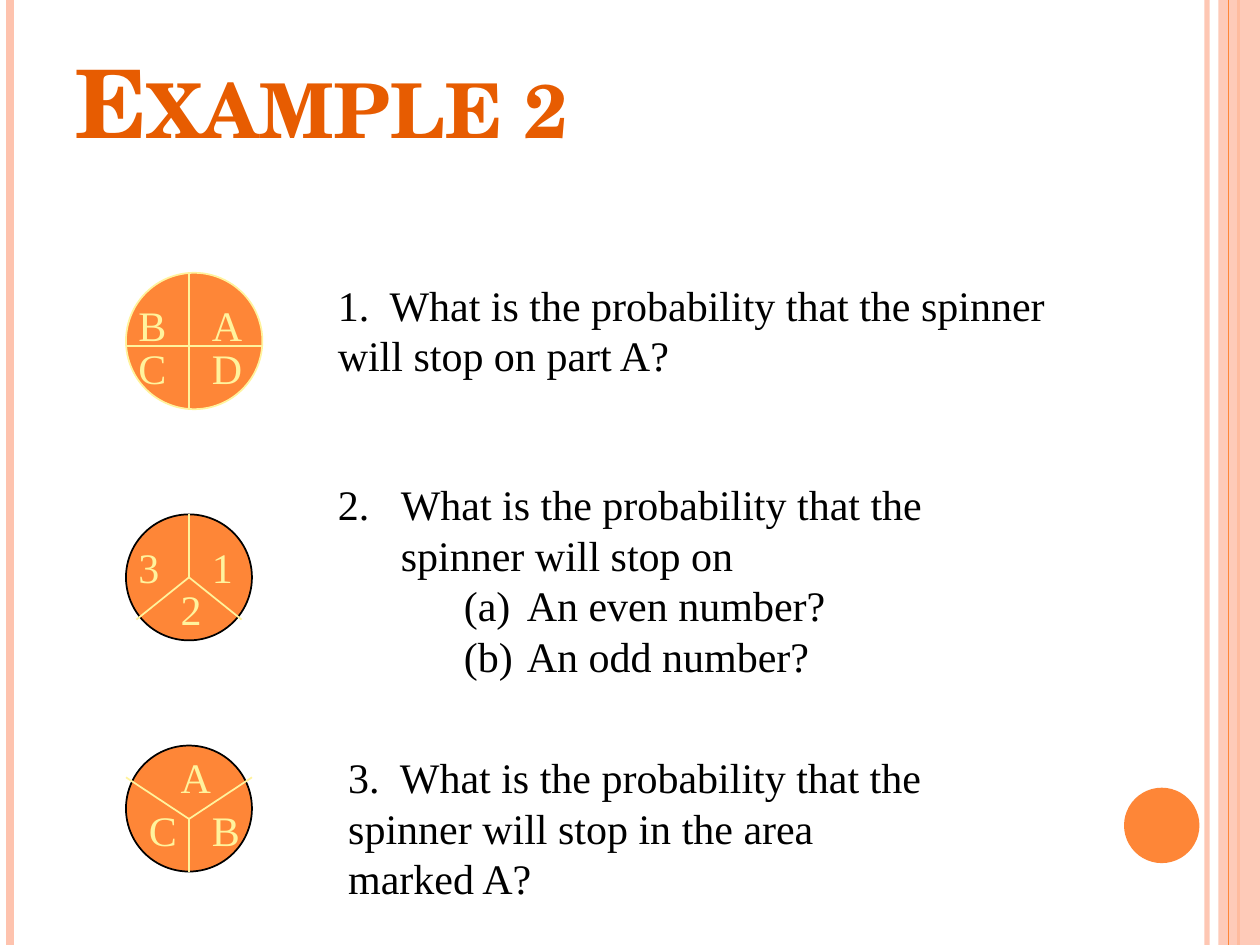
from lxml import etree
from pptx import Presentation
from pptx.dml.color import RGBColor
from pptx.enum.shapes import MSO_CONNECTOR, MSO_SHAPE
from pptx.enum.text import MSO_ANCHOR, PP_ALIGN
from pptx.oxml.ns import qn
from pptx.util import Cm, Pt

LINE = MSO_CONNECTOR.STRAIGHT
OVAL, RECT = MSO_SHAPE.OVAL, MSO_SHAPE.RECTANGLE
TOP, LEFT = MSO_ANCHOR.TOP, PP_ALIGN.LEFT
C = {"orange": "FE8637", "peach": "FEC3AE", "cream": "FFF39D",
     "title": "E75C01", "black": "000000"}
FONT = "Times New Roman"


def add_line(shapes, x1, y1, x2, y2, color, width):
    ln = shapes.add_connector(LINE, Cm(x1), Cm(y1), Cm(x2), Cm(y2))
    ln.line.color.rgb = RGBColor.from_string(C[color])
    ln.line.width = Pt(width)
    etree.SubElement(ln._element.spPr, qn("a:effectLst"))
    return ln


def add_text(shapes, x, y, w, h, lines, color):
    tf = shapes.add_textbox(Cm(x), Cm(y), Cm(w), Cm(h)).text_frame
    tf.word_wrap = True
    for i, text in enumerate(lines):
        p = tf.paragraphs[0] if i == 0 else tf.add_paragraph()
        r = p.add_run()
        r.text = text
        r.font.name = FONT
        r.font.size = Pt(24)
        r.font.color.rgb = RGBColor.from_string(C[color])
    return tf


prs = Presentation()
prs.slide_width, prs.slide_height = Cm(25.4), Cm(19.05)
s = prs.slides.add_slide(prs.slide_layouts[5])

edge = add_line(s.shapes, 24.33, 0, 24.33, 19.05, "peach", 3)
add_line(s.shapes, 0.21, 0, 0.21, 19.05, "peach", 4.5)
add_line(s.shapes, 24.97, 0, 24.97, 19.05, "orange", 1.5)
band = s.shapes.add_shape(RECT, Cm(24.56), 0, Cm(0.84), Cm(19.05))
add_line(s.shapes, 24.77, 0, 24.77, 19.05, "orange", 0.75)
dot = s.shapes.add_shape(OVAL, Cm(22.66), Cm(15.88), Cm(1.52), Cm(1.52))
for sp, color in [(band, "peach"), (dot, "orange")]:
    sp.shadow.inherit = False
    sp.fill.solid()
    sp.fill.fore_color.rgb = RGBColor.from_string(C[color])
    sp.line.fill.background()
for sp, alpha in [(edge, 93000), (band, 87000)]:
    clr = next(sp._element.spPr.iter(qn("a:srgbClr")))
    etree.SubElement(clr, qn("a:alpha")).set("val", str(alpha))

add_text(s.shapes, 6.56, 5.5, 15.66, 2.31,
         ["1.  What is the probability that the spinner will stop on part A?"], "black")
tf = add_text(s.shapes, 6.56, 9.53, 13.97, 4.37,
              ["What is the probability that the spinner will stop on",
               "An even number?", "An odd number?"], "black")
add_text(s.shapes, 6.77, 15.03, 12.28, 3.33,
         ["3.  What is the probability that the spinner will stop in the area marked A?"],
         "black")

numbering = [(1.27, "arabicPeriod", 2), (3.81, "alphaLcParenBoth", 1),
             (3.81, "alphaLcParenBoth", 1)]
for p, (margin, kind, start) in zip(tf.paragraphs, numbering):
    p.level = 0 if kind == "arabicPeriod" else 2
    pPr = p._p.get_or_add_pPr()
    pPr.set("marL", str(Cm(margin)))
    pPr.set("indent", str(Cm(-1.27)))
    bullet = etree.SubElement(pPr, qn("a:buAutoNum"))
    bullet.set("type", kind)
    if start > 1:
        bullet.set("startAt", str(start))

spinners = [
    (5.5, 2.75, "cream",
     [(1.27, 0, 1.27, 2.75), (0, 1.48, 2.75, 1.48)],
     [("A", 1.48, 0.42), ("B", 0, 0.42), ("C", 0, 1.27), ("D", 1.48, 1.27)]),
    (10.37, 2.54, "black",
     [(1.27, 0, 1.27, 1.27), (1.27, 1.27, 2.33, 2.12), (1.27, 1.27, 0.21, 2.12)],
     [("3", 0, 0.42), ("1", 1.48, 0.42), ("2", 0.85, 1.27)]),
    (15.03, 2.54, "black",
     [(1.27, 1.48, 1.27, 2.54), (1.27, 1.48, 2.54, 0.64), (1.27, 1.48, 0, 0.64)],
     [("A", 0.85, 0), ("C", 0.21, 1.06), ("B", 1.48, 1.06)]),
]
x = 2.54
for y, size, outline, spokes, labels in spinners:
    group = s.shapes.add_group_shape().shapes
    sp = group.add_shape(OVAL, Cm(x), Cm(y), Cm(size), Cm(size))
    sp.shadow.inherit = False
    sp.fill.solid()
    sp.fill.fore_color.rgb = RGBColor.from_string(C["orange"])
    sp.line.color.rgb = RGBColor.from_string(C[outline])
    sp.line.width = Pt(1)
    for x1, y1, x2, y2 in spokes:
        add_line(group, x + x1, y + y1, x + x2, y + y2, "cream", 1)
    for label, dx, dy in labels:
        add_text(group, x + dx, y + dy, 1.06, 1.27, [label], "cream")

title = s.shapes.title
title.left, title.top, title.width, title.height = Cm(1.27), Cm(0.76), Cm(20.75), Cm(3.18)
tf = title.text_frame
tf.vertical_anchor = TOP
p = tf.paragraphs[0]
p.alignment = LEFT
r = p.add_run()
r.text = "Example 2"
r.font.name = "TeX Gyre Schola"
r.font.size = Pt(54)
r.font.bold = True
r.font.color.rgb = RGBColor.from_string(C["title"])
r._r.get_or_add_rPr().set("cap", "small")

prs.save("out.pptx")
